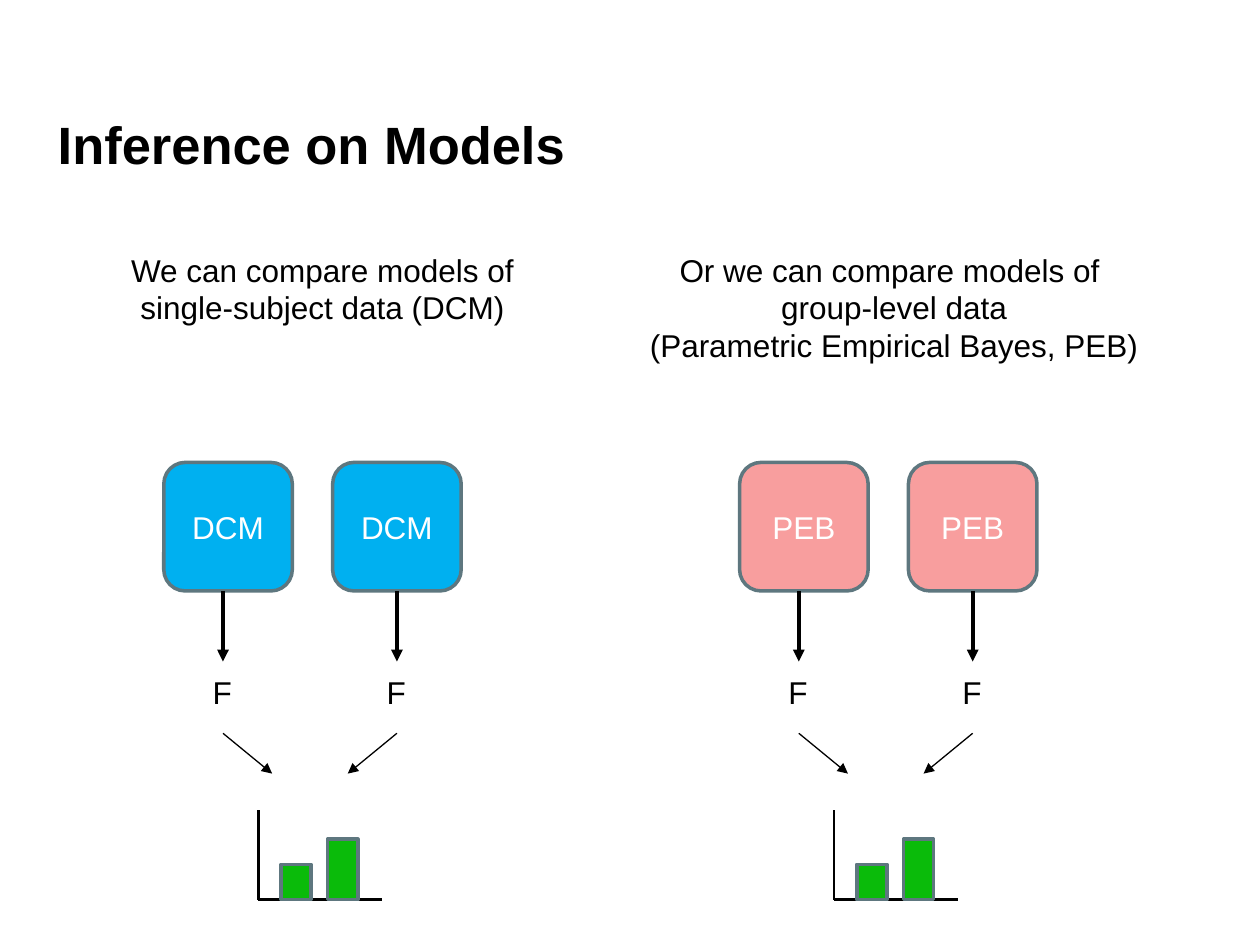
from lxml import etree
from pptx import Presentation
from pptx.dml.color import RGBColor
from pptx.enum.shapes import MSO_CONNECTOR, MSO_SHAPE
from pptx.enum.text import MSO_ANCHOR, PP_ALIGN
from pptx.oxml.ns import qn
from pptx.util import Inches, Pt

STRAIGHT = MSO_CONNECTOR.STRAIGHT
RECT, ROUNDED = MSO_SHAPE.RECTANGLE, MSO_SHAPE.ROUNDED_RECTANGLE
LEFT, CENTER = PP_ALIGN.LEFT, PP_ALIGN.CENTER
TOP, MIDDLE = MSO_ANCHOR.TOP, MSO_ANCHOR.MIDDLE

BLACK = RGBColor(0x00, 0x00, 0x00)
WHITE = RGBColor(0xFF, 0xFF, 0xFF)
SLATE = RGBColor(0x5E, 0x77, 0x7F)
BLUE = RGBColor(0x00, 0xB0, 0xF0)
PINK = RGBColor(0xF8, 0x9E, 0x9E)
GREEN = RGBColor(0x0A, 0xBB, 0x0A)

FONT = "Arial"
PANEL_X = (1.3, 5.87)  # left edge of each column of the slide
BOX_Y, BOX_SIZE, BOX_STEP = 3.67, 1.02, 1.34
F_X = (0.47, 1.85)  # centres of the two F labels within a panel
ARROW_END, F_Y, MERGE_Y, MERGE_END = 5.25, 5.29, 5.82, 6.14
AXIS_X, AXIS_TOP, AXIS_BASE, AXIS_WIDTH = 0.75, 6.43, 7.14, 0.98
BAR_X, BAR_STEP, BAR_WIDTH = 0.93, 0.37, 0.24
BAR_HEIGHTS = (0.28, 0.48)


def write(tf, lines, size=18, color=BLACK, align=CENTER, bold=False):
    for i, line in enumerate(lines):
        p = tf.paragraphs[0] if i == 0 else tf.add_paragraph()
        p.alignment = align
        r = p.add_run()
        r.text = line
        r.font.name, r.font.size, r.font.bold = FONT, Pt(size), bold
        r.font.color.rgb = color


def add_text(slide, box, lines, wrap=True, **style):
    tf = slide.shapes.add_textbox(*map(Inches, box)).text_frame
    tf.word_wrap = wrap
    tf.vertical_anchor = TOP
    write(tf, lines, **style)


def add_block(shapes, kind, box, fill):
    sp = shapes.add_shape(kind, *map(Inches, box))
    sp.shadow.inherit = False
    sp.fill.solid()
    sp.fill.fore_color.rgb = fill
    sp.line.color.rgb = SLATE
    sp.line.width = Pt(2)
    return sp


def add_line(shapes, start, end, width, arrow=False):
    line = shapes.add_connector(STRAIGHT, *map(Inches, start + end))
    line.line.color.rgb = BLACK
    line.line.width = Pt(width)
    if arrow:
        etree.SubElement(line.line._get_or_add_ln(), qn("a:tailEnd"), type="triangle")
    etree.SubElement(line._element.spPr, qn("a:effectLst"))
    return line


def add_evidence_chart(slide, x):
    """Draw the merging arrows and the sketched bar chart as one group."""
    shapes = slide.shapes.add_group_shape().shapes
    for f_x, shift in zip(F_X, (0.39, -0.39)):
        add_line(shapes, (x + f_x, MERGE_Y), (x + f_x + shift, MERGE_END), 0.75, arrow=True)
    origin = (x + AXIS_X, AXIS_BASE)
    add_line(shapes, (x + AXIS_X, AXIS_TOP), origin, 1.5)
    add_line(shapes, origin, (x + AXIS_X + AXIS_WIDTH, AXIS_BASE), 1.5)
    for i, height in enumerate(BAR_HEIGHTS):
        left = x + BAR_X + i * BAR_STEP
        add_block(shapes, RECT, (left, AXIS_BASE - height, BAR_WIDTH, height), GREEN)


def add_panel(slide, x, label, fill):
    """Draw two models, their F values and the comparison below them."""
    for i, f_x in enumerate(F_X):
        box = (x + i * BOX_STEP, BOX_Y, BOX_SIZE, BOX_SIZE)
        model = add_block(slide.shapes, ROUNDED, box, fill)
        model.text_frame.vertical_anchor = MIDDLE
        write(model.text_frame, [label], color=WHITE)
        center = x + f_x
        arrow = add_line(slide.shapes, (center, BOX_Y + BOX_SIZE), (center, ARROW_END),
                         2.25, arrow=True)
        if i == 1:  # only the right arrow leaves from the middle of its box
            arrow.begin_connect(model, 2)
        add_text(slide, (center - 0.18, F_Y, 0.36, 0.4), ["F"], wrap=False, align=LEFT)
    add_evidence_chart(slide, x)


def main():
    prs = Presentation()
    prs.slide_width, prs.slide_height = Inches(10), Inches(7.5)
    slide = prs.slides.add_slide(prs.slide_layouts[6])
    add_text(slide, (0.36, 0.84, 9.28, 1.42), ["Inference on Models"],
             size=30, align=LEFT, bold=True)
    add_text(slide, (0.83, 1.94, 3.46, 0.71),
             ["We can compare models of single-subject data (DCM)"])
    add_text(slide, (5.04, 1.94, 4.11, 1.01),
             ["Or we can compare models of ", "group-level data",
              "(Parametric Empirical Bayes, PEB)"], wrap=False)
    for x, label, fill in zip(PANEL_X, ("DCM", "PEB"), (BLUE, PINK)):
        add_panel(slide, x, label, fill)
    prs.save("out.pptx")


if __name__ == "__main__":
    main()
